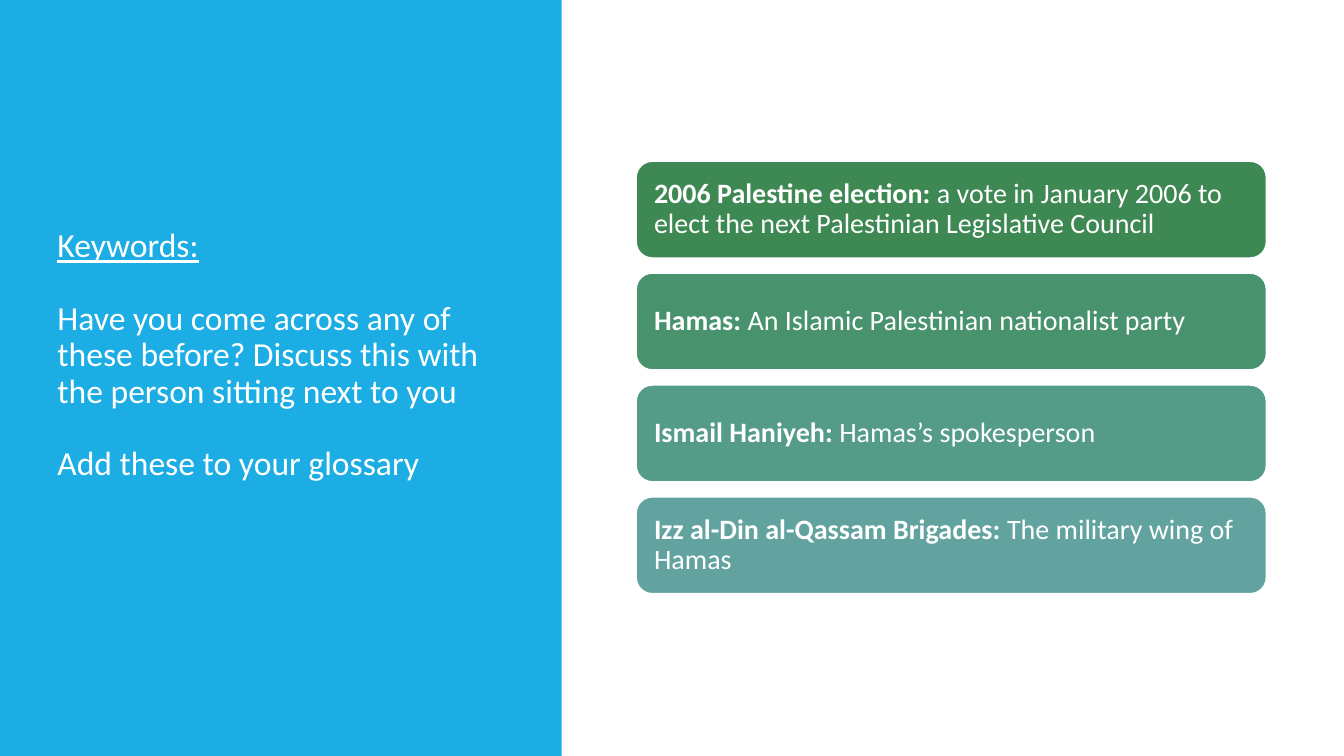
from pptx import Presentation
from pptx.dml.color import RGBColor
from pptx.enum.shapes import MSO_SHAPE
from pptx.enum.text import MSO_ANCHOR, MSO_AUTO_SIZE, PP_ALIGN
from pptx.util import Inches, Pt

RECT, ROUND = MSO_SHAPE.RECTANGLE, MSO_SHAPE.ROUNDED_RECTANGLE
MIDDLE, LEFT, FIXED = MSO_ANCHOR.MIDDLE, PP_ALIGN.LEFT, MSO_AUTO_SIZE.NONE

WHITE = RGBColor(0xFF, 0xFF, 0xFF)
BLUE = RGBColor(0x1C, 0xAD, 0xE4)
GREENS = [
    RGBColor(0x3E, 0x88, 0x53),
    RGBColor(0x49, 0x92, 0x6E),
    RGBColor(0x54, 0x9C, 0x88),
    RGBColor(0x62, 0xA3, 0x9F),
]

# Grid in inches
WIDTH, HEIGHT = 13.33, 7.5
PANEL = 5.57
TEXT_X, TEXT_W = 0.47, 4.49
CARD_X, CARD_Y, CARD_W, CARD_H = 6.31, 1.6, 6.25, 0.96
PITCH = 1.11
LINE = 0.36  # height of one text line in the panel

TERMS = [
    ("2006 Palestine election: ",
     "a vote in January 2006 to elect the next Palestinian Legislative Council"),
    ("Hamas: ", "An Islamic Palestinian nationalist party"),
    ("Ismail Haniyeh: ", "Hamas’s spokesperson"),
    ("Izz al-Din al-Qassam Brigades: ", "The military wing of Hamas"),
]


def place(shape, x, y, w, h):
    shape.left, shape.top = Inches(x), Inches(y)
    shape.width, shape.height = Inches(w), Inches(h)


def style(frame, size):
    """Format left-aligned white text, centred vertically."""
    frame.word_wrap = True
    frame.auto_size = FIXED
    frame.vertical_anchor = MIDDLE
    for para in frame.paragraphs:
        para.alignment = LEFT
        para.line_spacing = 0.9
        for run in para.runs:
            run.font.name = "Calibri"
            run.font.size = Pt(size)
            run.font.color.rgb = WHITE


def add_block(slide, kind, box, fill):
    block = slide.shapes.add_shape(kind, *map(Inches, box))
    block.shadow.inherit = False
    block.fill.solid()
    block.fill.fore_color.rgb = fill
    block.line.fill.background()
    return block


def add_card(slide, row, term, text):
    box = (CARD_X, CARD_Y + row * PITCH, CARD_W, CARD_H)
    card = add_block(slide, ROUND, box, GREENS[row])
    card.line.color.rgb = WHITE
    card.line.width = Pt(1)
    frame = card.text_frame
    frame.margin_left = frame.margin_right = Inches(0.13)
    para = frame.paragraphs[0]
    for part, bold in ((term, True), (text, False)):
        run = para.add_run()
        run.text = part
        run.font.bold = bold
    style(frame, 20)


def set_title(slide):
    title = slide.shapes.title
    place(title, TEXT_X, 0.52, TEXT_W, 6.02)
    frame = title.text_frame
    frame.text = ("Keywords:\nHave you come across any of these before? "
                  "Discuss this with the person sitting next to you")
    style(frame, 24)
    # Leave room below for the closing task
    frame.margin_bottom = Inches(0.05 + 2 * LINE)
    head, ask = frame.paragraphs
    head.runs[0].font.underline = True
    head.space_after = Inches(LINE)
    ask.space_before = Pt(0)


def add_task(slide):
    box = slide.shapes.add_textbox(*map(Inches, (TEXT_X, 4.06, TEXT_W, 0.74)))
    frame = box.text_frame
    frame.text = "Add these to your glossary"
    style(frame, 24)
    frame.margin_top = Inches(0.05 + LINE)
    frame.margin_bottom = Inches(0.05)


def main():
    deck = Presentation()
    deck.slide_width, deck.slide_height = Inches(WIDTH), Inches(HEIGHT)
    slide = deck.slides.add_slide(deck.slide_layouts[5])

    # Left panel, sent behind the title
    panel = add_block(slide, RECT, (0, 0, PANEL, HEIGHT), BLUE)
    slide.shapes.title.element.addprevious(panel.element)
    set_title(slide)

    # Keyword cards
    for row, (term, text) in enumerate(TERMS):
        add_card(slide, row, term, text)

    add_task(slide)
    deck.save("out.pptx")


if __name__ == "__main__":
    main()
